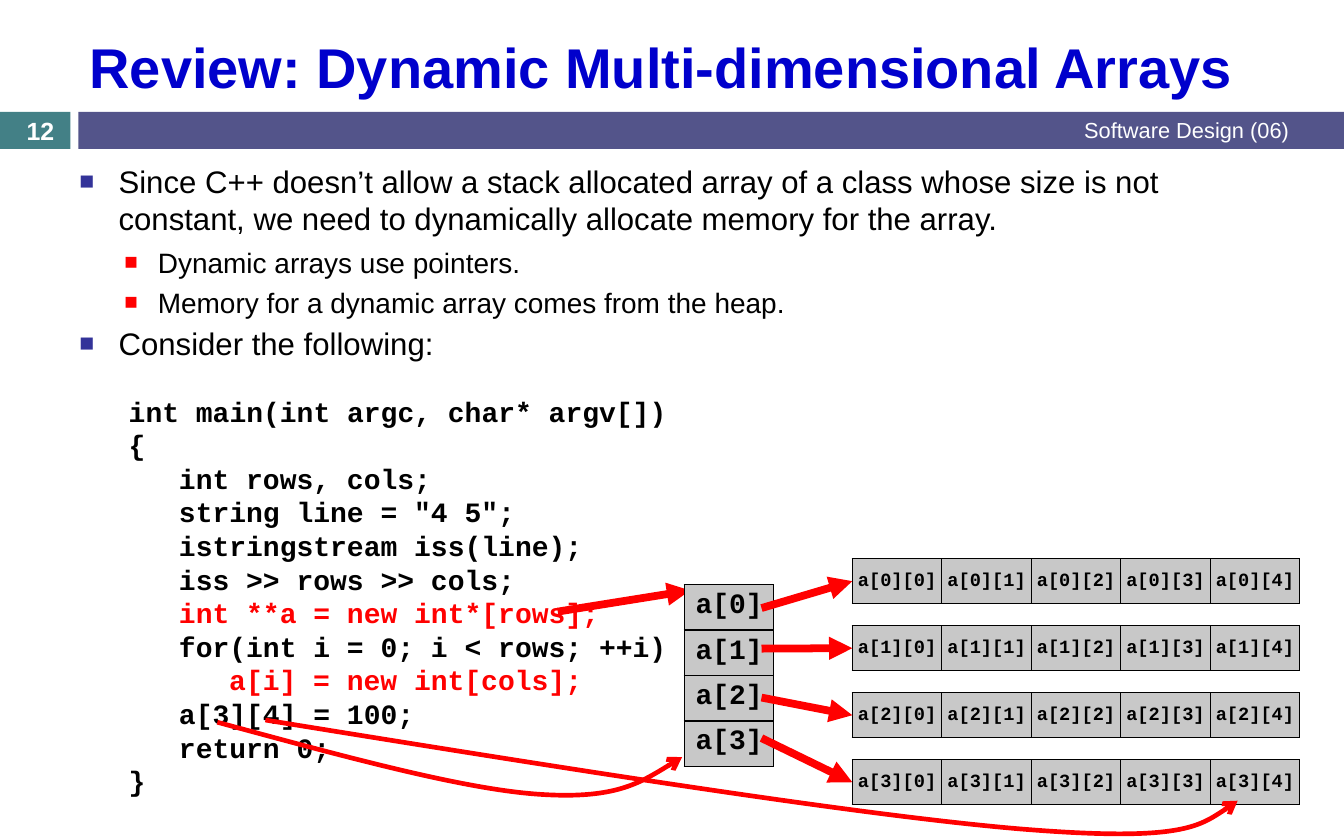
from dataclasses import dataclass
from typing import NamedTuple

from lxml.etree import SubElement
from pptx import Presentation
from pptx.dml.color import RGBColor
from pptx.enum.shapes import MSO_CONNECTOR as Connector, MSO_SHAPE as Preset
from pptx.enum.text import MSO_ANCHOR as Anchor, PP_ALIGN as Align
from pptx.oxml import parse_xml
from pptx.oxml.ns import nsdecls, qn
from pptx.util import Cm, Pt

BLACK = RGBColor(0x00, 0x00, 0x00)
WHITE = RGBColor(0xFF, 0xFF, 0xFF)
RED = RGBColor(0xFF, 0x00, 0x00)
BLUE = RGBColor(0x00, 0x00, 0xCC)
NAVY = RGBColor(0x33, 0x33, 0x99)
TEAL = RGBColor(0x43, 0x80, 0x86)
INDIGO = RGBColor(0x53, 0x54, 0x8A)
GRAY = RGBColor(0xC8, 0xC8, 0xC8)

SANS, MONO = "Arial", "Courier New"
CODE_INDENT = 1.14
CELL_WIDTH = 2.03
ROWS, COLS = 4, 5
GRID_LEFT, GRID_TOP, GRID_STEP, GRID_HEIGHT = 19.33, 12.67, 1.52, 1.02
POINTER_STARTS = (13.79, 14.71, 15.82, 16.74)


class Box(NamedTuple):
    left: float
    top: float
    width: float
    height: float

    def lengths(self) -> list:
        return [Cm(value) for value in self]


class Point(NamedTuple):
    x: float
    y: float


class Bullet(NamedTuple):
    color: RGBColor
    hanging: float


@dataclass(frozen=True)
class Line:
    text: str
    size: float
    font: str = SANS
    color: RGBColor = BLACK
    bold: bool = False
    align: Align = Align.LEFT
    before: float = 0
    pitch: float | None = None
    indent: float = 0
    bullet: Bullet | None = None


def code(text: str, depth: int = 0, color: RGBColor = BLACK) -> Line:
    return Line(text, 18, MONO, color, True, pitch=21.6, indent=depth * CODE_INDENT)


def topic(text: str, before: float) -> Line:
    return Line(text, 20, before=before, pitch=23.8, indent=0.89, bullet=Bullet(NAVY, 0.89))


def detail(text: str, before: float) -> Line:
    return Line(text, 18, before=before, pitch=21.7, indent=1.78, bullet=Bullet(RED, 0.76))


BODY = [
    topic("Since C++ doesn’t allow a stack allocated array of a class whose size is not "
          "constant, we need to dynamically allocate memory for the array.", 7),
    detail("Dynamic arrays use pointers.", 5.5),
    detail("Memory for a dynamic array comes from the heap.", 4),
    topic("Consider the following:", 4),
]
PROGRAM = [
    code("int main(int argc, char* argv[])"),
    code("{"),
    code("int rows, cols;", 1),
    code('string line = "4 5";', 1),
    code("istringstream iss(line);", 1),
    code("iss >> rows >> cols;", 1),
    code("int **a = new int*[rows];", 1, RED),
    code("for(int i = 0; i < rows; ++i)", 1),
    code("a[i] = new int[cols];", 2, RED),
    code("a[3][4] = 100;", 1),
    code("return 0;", 1),
    code("}"),
]
ROW_CURVE = [Point(4.93, 16.38), Point(7.67, 17.12), Point(10.41, 17.88), Point(12.17, 18.01),
             Point(13.94, 18.14), Point(14.71, 17.65), Point(15.47, 17.17)]
CELL_CURVE = [Point(6.02, 16.33), Point(12.75, 17.42), Point(19.46, 18.49), Point(23.14, 18.8),
              Point(26.8, 19.1), Point(27.43, 18.62), Point(28.07, 18.16)]


def apply(target, values: dict) -> None:
    for name, value in values.items():
        setattr(target, name, value)


def write(frame, lines: list[Line]) -> None:
    for index, line in enumerate(lines):
        paragraph = frame.paragraphs[0] if index == 0 else frame.add_paragraph()
        apply(paragraph, {"alignment": line.align, "space_before": Pt(line.before)})
        if line.pitch:
            paragraph.line_spacing = Pt(line.pitch)
        run = paragraph.add_run()
        run.text = line.text
        apply(run.font, {"name": line.font, "size": Pt(line.size), "bold": line.bold})
        run.font.color.rgb = line.color
        properties = paragraph._p.get_or_add_pPr()
        properties.set("marL", str(Cm(line.indent)))
        if line.bullet:
            properties.set("indent", str(-Cm(line.bullet.hanging)))
            color = SubElement(properties, qn("a:buClr"))
            SubElement(color, qn("a:srgbClr"), val=str(line.bullet.color))
            SubElement(properties, qn("a:buSzPct"), val="80000")
            SubElement(properties, qn("a:buFont"), typeface=SANS)
            SubElement(properties, qn("a:buChar"), char="■")


def add_text(slide, box: Box, lines: list[Line], anchor: Anchor = Anchor.MIDDLE) -> None:
    frame = slide.shapes.add_textbox(*box.lengths()).text_frame
    apply(frame, {"word_wrap": True, "vertical_anchor": anchor})
    write(frame, lines)


def add_panel(slide, box: Box, color: RGBColor):
    shape = slide.shapes.add_shape(Preset.RECTANGLE, *box.lengths())
    shape.shadow.inherit = False
    shape.fill.solid()
    shape.fill.fore_color.rgb = color
    shape.line.fill.background()
    return shape


def add_array(slide, box: Box, labels: list[list[str]], size: float, cell_format: dict) -> None:
    table = slide.shapes.add_table(len(labels), len(labels[0]), *box.lengths()).table
    for row, texts in enumerate(labels):
        for column, text in enumerate(texts):
            cell = table.cell(row, column)
            apply(cell, cell_format)
            cell.fill.solid()
            cell.fill.fore_color.rgb = GRAY
            write(cell.text_frame, [Line(text, size, MONO, bold=True, align=Align.CENTER)])
            properties = cell._tc.get_or_add_tcPr()
            for place, side in enumerate(("lnL", "lnR", "lnT", "lnB")):
                properties.insert(place, parse_xml(
                    f'<a:{side} {nsdecls("a")} w="{Pt(1)}"><a:solidFill>'
                    f'<a:srgbClr val="{BLACK}"/></a:solidFill></a:{side}>'))


def style_arrow(shape, width: float, head: str) -> None:
    shape.line.color.rgb = RED
    shape.line.width = Pt(width)
    SubElement(shape.line._get_or_add_ln(), qn("a:tailEnd"), type=head)


def add_arrow(slide, start: Point, end: Point) -> None:
    connector = slide.shapes.add_connector(
        Connector.STRAIGHT, *[Cm(value) for value in (*start, *end)])
    style_arrow(connector, 5, "triangle")
    SubElement(connector._element.spPr, qn("a:effectLst"))


def add_curve(slide, points: list[Point]) -> None:
    start, *controls = [(Cm(point.x), Cm(point.y)) for point in points]
    builder = slide.shapes.build_freeform(*start)
    builder.add_line_segments(controls, close=False)
    shape = builder.convert_to_shape()
    shape.shadow.inherit = False
    shape.fill.background()
    style_arrow(shape, 3, "arrow")
    outline = shape._element.spPr.find(".//" + qn("a:path"))
    segments = outline.findall(qn("a:lnTo"))
    for first in range(0, len(segments), 3):
        bezier = SubElement(outline, qn("a:cubicBezTo"))
        for segment in segments[first:first + 3]:
            bezier.append(segment[0])
            outline.remove(segment)


def main() -> None:
    presentation = Presentation()
    apply(presentation, {"slide_width": Cm(30.48), "slide_height": Cm(19.05)})
    slide = presentation.slides.add_slide(presentation.slide_layouts[6])

    add_panel(slide, Box(0, 2.54, 1.6, 0.84), TEAL)
    add_panel(slide, Box(1.78, 2.54, 28.7, 0.84), INDIGO)
    add_text(slide, Box(1.78, 0.48, 27.71, 2.03),
             [Line("Review: Dynamic Multi-dimensional Arrays", 36, color=BLUE, bold=True)])
    add_text(slide, Box(1.55, 3.56, 27.97, 4.98), BODY, Anchor.TOP)
    add_text(slide, Box(11.43, 2.51, 18.06, 0.89),
             [Line("Software Design (06)", 14, color=WHITE, align=Align.RIGHT)])
    add_text(slide, Box(0, 2.57, 1.83, 0.76),
             [Line("12", 16, color=WHITE, bold=True, align=Align.CENTER)])

    listing = add_panel(slide, Box(2.67, 8.76, 15.44, 9.5), WHITE).text_frame
    apply(listing, {"word_wrap": True, "vertical_anchor": Anchor.TOP, "margin_top": Cm(0.18)})
    write(listing, PROGRAM)

    add_arrow(slide, Point(12.65, 13.87), Point(15.65, 13.39))
    add_array(slide, Box(15.52, 13.26, CELL_WIDTH, 4.12), [[f"a[{row}]"] for row in range(ROWS)],
              18, {"margin_left": Cm(0.1), "margin_right": Cm(0.1)})
    tight = {"vertical_anchor": Anchor.MIDDLE, "margin_left": 0, "margin_right": 0,
             "margin_top": 0, "margin_bottom": 0}
    for row, start in enumerate(POINTER_STARTS):
        top = GRID_TOP + row * GRID_STEP
        add_array(slide, Box(GRID_LEFT, top, COLS * CELL_WIDTH, GRID_HEIGHT),
                  [[f"a[{row}][{column}]" for column in range(COLS)]], 12, tight)
        add_arrow(slide, Point(17.27, start), Point(GRID_LEFT, top + GRID_HEIGHT / 2))
    for curve in (ROW_CURVE, CELL_CURVE):
        add_curve(slide, curve)
    presentation.save("out.pptx")


if __name__ == "__main__":
    main()
